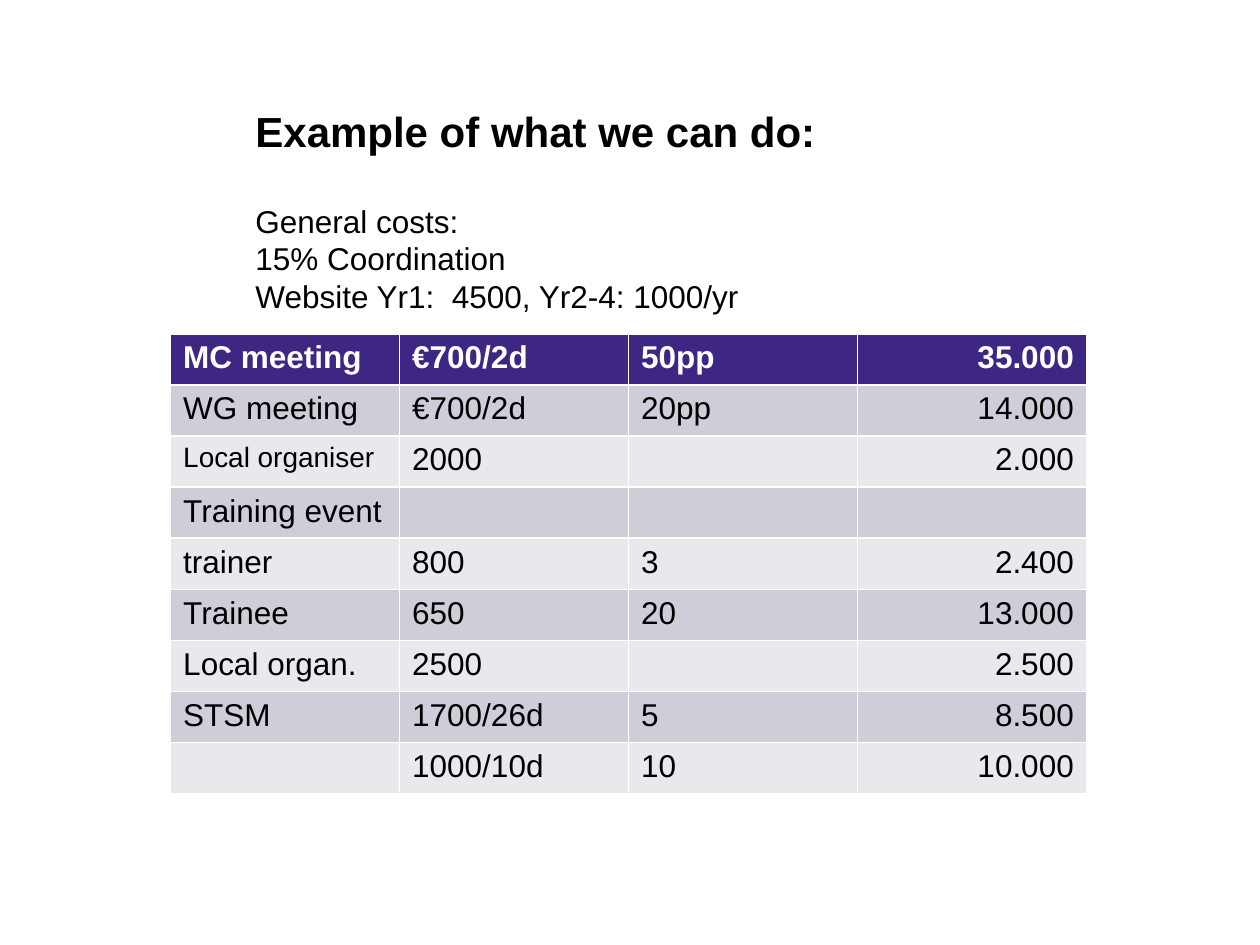
"""Build a slide with a cost example: heading, general costs and a budget table."""
from pptx import Presentation
from pptx.dml.color import RGBColor
from pptx.enum.text import MSO_AUTO_SIZE as AutoSize, PP_ALIGN as Align
from pptx.util import Cm, Pt

BLACK = RGBColor(0x00, 0x00, 0x00)
WHITE = RGBColor(0xFF, 0xFF, 0xFF)
PURPLE = RGBColor(0x3E, 0x27, 0x82)
BAND_DARK = RGBColor(0xCE, 0xCD, 0xD8)
BAND_LIGHT = RGBColor(0xE8, 0xE8, 0xED)


def add_run(paragraph, text, size, color=BLACK, bold=False):
    run = paragraph.add_run()
    run.text = text
    run.font.name = "Arial"
    run.font.size = Pt(size)
    run.font.bold = bold
    run.font.color.rgb = color


def add_text(slide, left, top, width, height, lines, size, bold=False):
    frame = slide.shapes.add_textbox(Cm(left), Cm(top), Cm(width), Cm(height)).text_frame
    frame.word_wrap = False
    frame.auto_size = AutoSize.SHAPE_TO_FIT_TEXT
    for index, line in enumerate(lines):
        paragraph = frame.add_paragraph() if index else frame.paragraphs[0]
        add_run(paragraph, line, size, bold=bold)


presentation = Presentation()
presentation.slide_width = Cm(25.4)
presentation.slide_height = Cm(19.05)
slide = presentation.slides.add_slide(presentation.slide_layouts[6])

add_text(slide, 4.9, 2.01, 11.91, 1.27, ["Example of what we can do:"], 24, bold=True)

costs = [
    ("MC meeting", "€700/2d", "50pp", "35.000"),
    ("WG meeting", "€700/2d", "20pp", "14.000"),
    ("Local organiser", "2000", "", "2.000"),
    ("Training event", "", "", ""),
    ("trainer", "800", "3", "2.400"),
    ("Trainee", "650", "20", "13.000"),
    ("Local organ.", "2500", "", "2.500"),
    ("STSM", "1700/26d", "5", "8.500"),
    ("", "1000/10d", "10", "10.000"),
]
table = slide.shapes.add_table(
    len(costs), len(costs[0]), Cm(3.44), Cm(6.73), Cm(18.46), Cm(9.27)
).table

for row_index, row in enumerate(costs):
    header = row_index == 0
    band = BAND_DARK if row_index % 2 else BAND_LIGHT
    for column_index, text in enumerate(row):
        cell = table.cell(row_index, column_index)
        cell.fill.solid()
        cell.fill.fore_color.rgb = PURPLE if header else band
        if not text:
            continue
        paragraph = cell.text_frame.paragraphs[0]
        if column_index == len(row) - 1:
            paragraph.alignment = Align.RIGHT
        size = 16 if text == "Local organiser" else 18
        add_run(paragraph, text, size, WHITE if header else BLACK, header)

general_costs = ["General costs:", "15% Coordination", "Website Yr1:  4500, Yr2-4: 1000/yr"]
add_text(slide, 4.9, 3.94, 10.34, 2.57, general_costs, 18)

presentation.save("out.pptx")
